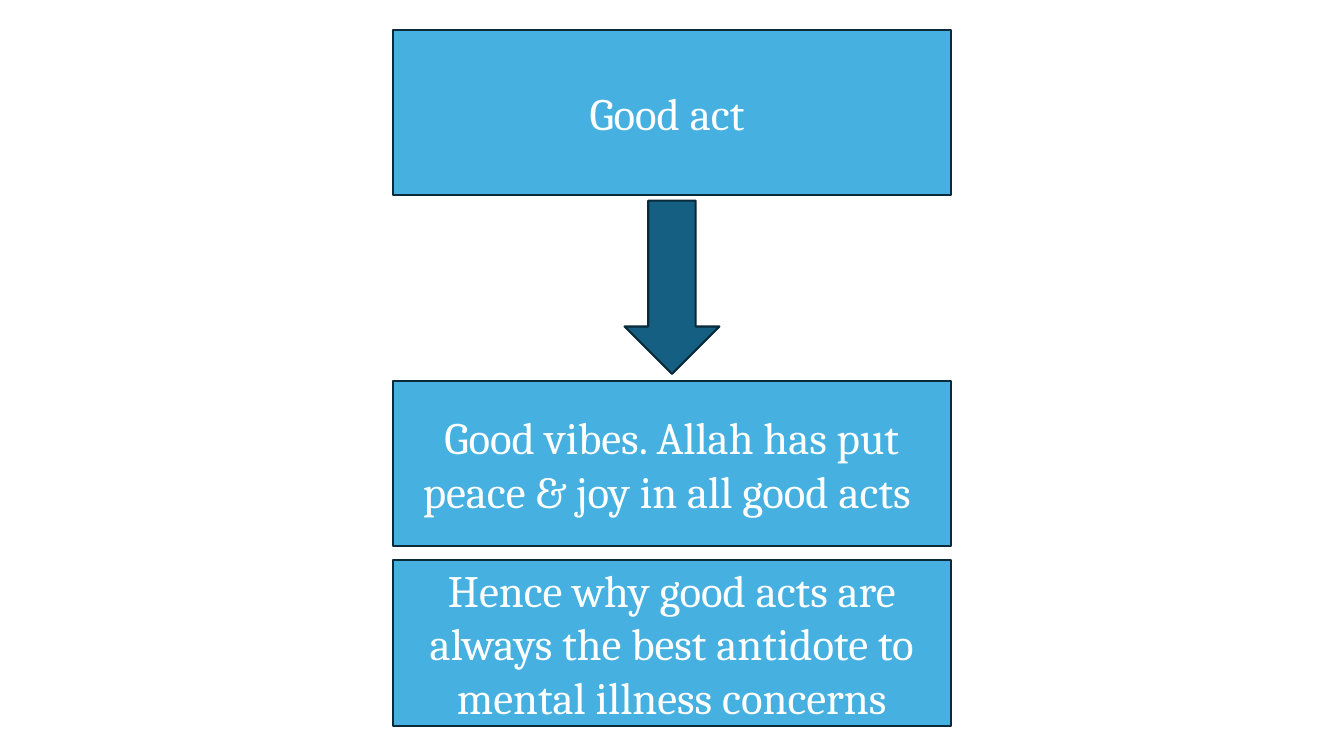
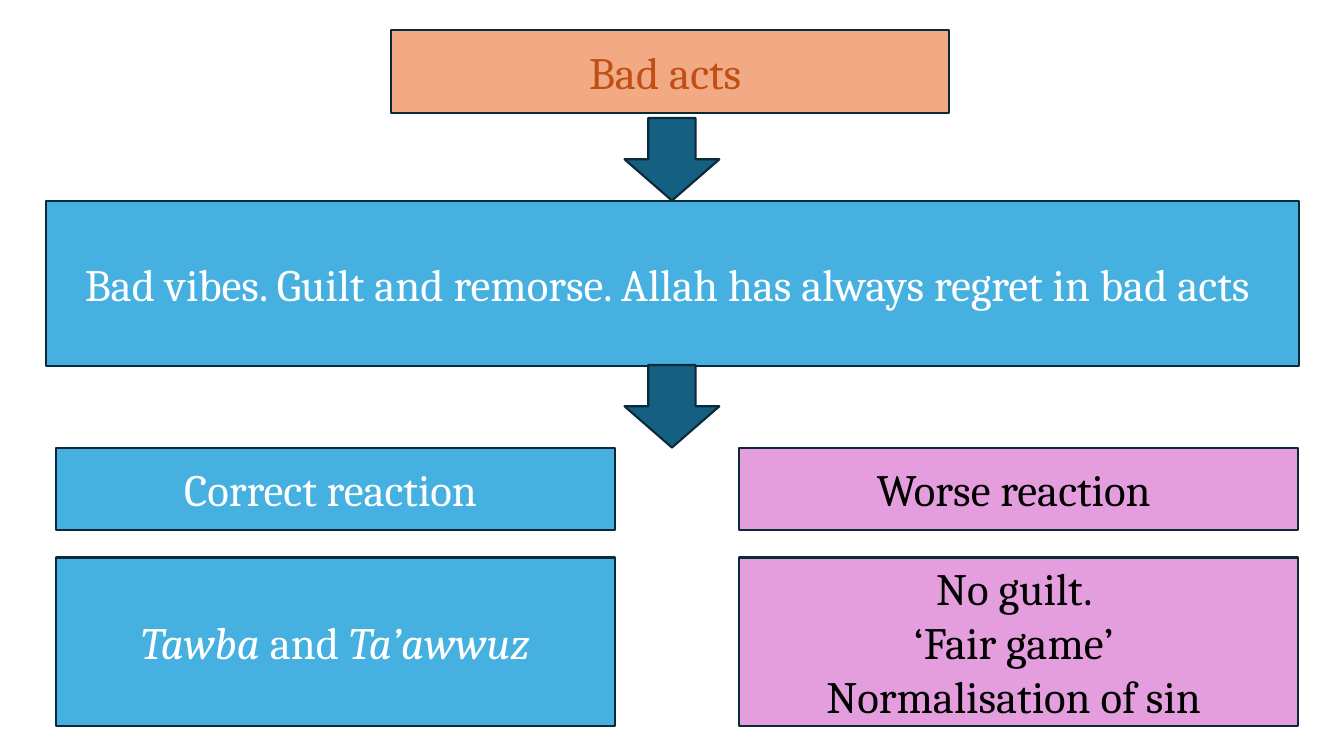
from pptx import Presentation
from pptx.dml.color import RGBColor
from pptx.enum.shapes import MSO_SHAPE
from pptx.enum.text import MSO_ANCHOR, PP_ALIGN
from pptx.util import Pt

RECTANGLE = MSO_SHAPE.RECTANGLE
DOWN_ARROW = MSO_SHAPE.DOWN_ARROW
MIDDLE = MSO_ANCHOR.MIDDLE
CENTER = PP_ALIGN.CENTER

# Shared look: (fill, text) colour pairs, outline and font
BLUE = ("46B1E1", "FFFFFF")
ORANGE = ("F2AA84", "C04F15")
PINK = ("E59EDD", "000000")
ARROW_FILL = "156082"
OUTLINE = "092A39"
FONT = "Cambria"
FONT_SIZE = 32

# Shared measures in points
SLIDE_WIDTH, SLIDE_HEIGHT = 960, 540
TOP = 21.6
BOX_WIDTH, BOX_HEIGHT = 399, 118
HALF_HEIGHT = BOX_HEIGHT / 2
ARROW_WIDTH = 67.8


def color(hex_value):
    return RGBColor.from_string(hex_value)


def add_outlined(slide, kind, left, top, width, height, fill):
    shape = slide.shapes.add_shape(kind, Pt(left), Pt(top), Pt(width), Pt(height))
    shape.shadow.inherit = False
    shape.fill.solid()
    shape.fill.fore_color.rgb = color(fill)
    shape.line.color.rgb = color(OUTLINE)
    shape.line.width = Pt(1.5)
    return shape


def add_box(slide, left, top, width, height, lines, style):
    """Each line is a string or a list of (text, italic) runs."""
    fill, text_color = style
    shape = add_outlined(slide, RECTANGLE, left, top, width, height, fill)
    frame = shape.text_frame
    frame.word_wrap = True
    frame.vertical_anchor = MIDDLE
    for index, line in enumerate(lines):
        paragraph = frame.add_paragraph() if index else frame.paragraphs[0]
        paragraph.alignment = CENTER
        paragraph.font.name = FONT
        paragraph.font.size = Pt(FONT_SIZE)
        paragraph.font.color.rgb = color(text_color)
        if isinstance(line, str):
            paragraph.add_run().text = line
            continue
        for text, italic in line:
            run = paragraph.add_run()
            run.text = text
            run.font.italic = italic


def add_arrow(slide, top, height):
    left = (SLIDE_WIDTH - ARROW_WIDTH) / 2
    add_outlined(slide, DOWN_ARROW, left, top, ARROW_WIDTH, height, ARROW_FILL)


def add_reaction(slide, left, top, heading, lines, style):
    """Column with a heading box above an explanation box."""
    add_box(slide, left, top, BOX_WIDTH, HALF_HEIGHT, [heading], style)
    add_box(slide, left, top + 78.5, BOX_WIDTH, 120.2, lines, style)


def build_good_act(slide):
    left = (SLIDE_WIDTH - BOX_WIDTH) / 2
    boxes = [
        (TOP, "Good act "),
        (272.2, "Good vibes. Allah has put peace & joy in all good acts "),
        (400.3, "Hence why good acts are always the best antidote to "
                "mental illness concerns"),
    ]
    for top, text in boxes:
        add_box(slide, left, top, BOX_WIDTH, BOX_HEIGHT, [text], BLUE)
    add_arrow(slide, 143.3, 123.8)


def build_bad_acts(slide):
    # Cause and effect
    add_box(slide, 279.2, TOP, BOX_WIDTH, HALF_HEIGHT, ["Bad acts "], ORANGE)
    add_arrow(slide, 84.3, HALF_HEIGHT)
    add_box(slide, 33, 143.3, 895, BOX_HEIGHT,
            ["Bad vibes. Guilt and remorse. Allah has always regret in bad acts "],
            BLUE)
    add_arrow(slide, 260.7, HALF_HEIGHT)

    # The two reactions
    add_reaction(slide, 40.2, 319.7, "Correct reaction ",
                 [[("Tawba", True), (" and ", False), ("Ta’awwuz", True)]], BLUE)
    add_reaction(slide, 528.2, 319.7, "Worse reaction ",
                 ["No guilt. ", "‘Fair game’ ", "Normalisation of sin "], PINK)


def main():
    presentation = Presentation()
    presentation.slide_width = Pt(SLIDE_WIDTH)
    presentation.slide_height = Pt(SLIDE_HEIGHT)
    blank_layout = presentation.slide_layouts[6]
    for build in (build_good_act, build_bad_acts):
        build(presentation.slides.add_slide(blank_layout))
    presentation.save("out.pptx")


if __name__ == "__main__":
    main()
